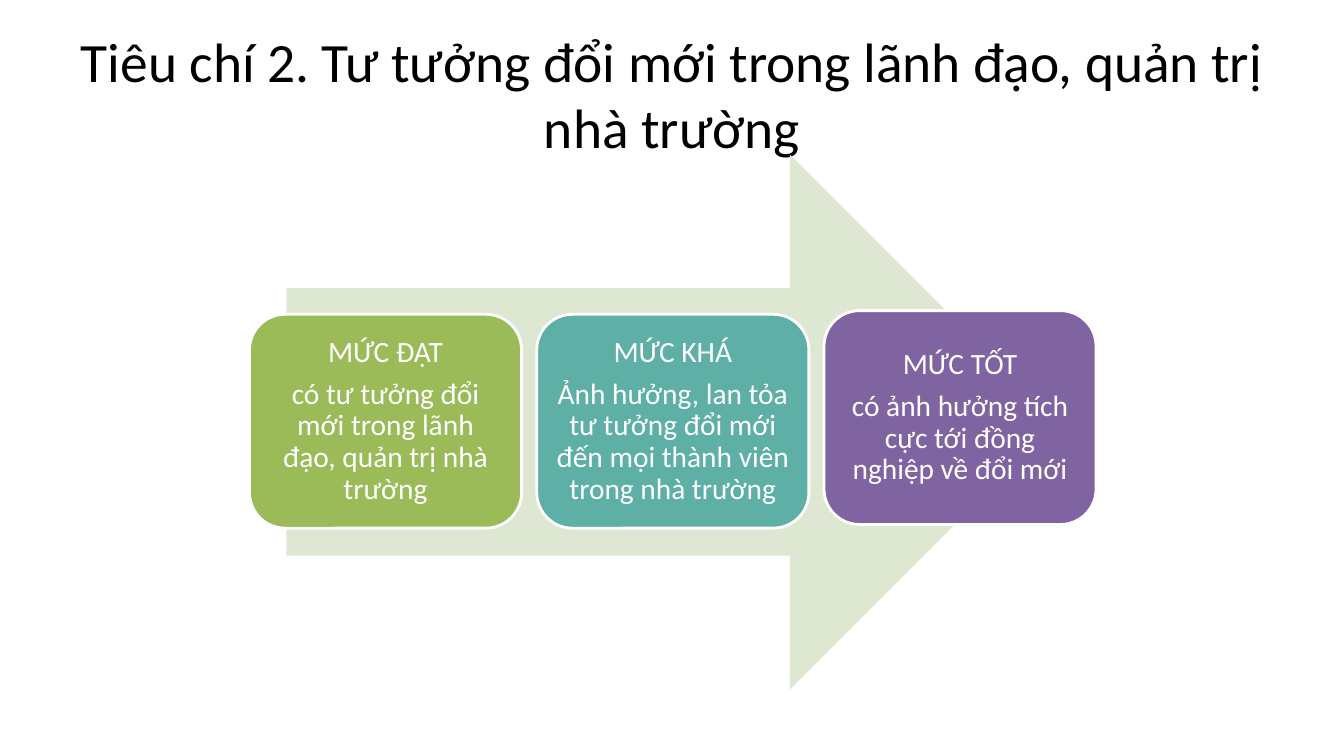
from pptx import Presentation
from pptx.dml.color import RGBColor
from pptx.enum.shapes import MSO_SHAPE
from pptx.enum.text import MSO_ANCHOR, MSO_AUTO_SIZE, PP_ALIGN
from pptx.util import Pt

ARROW, CARD = MSO_SHAPE.RIGHT_ARROW, MSO_SHAPE.ROUNDED_RECTANGLE
MIDDLE, CENTER, NO_FIT = MSO_ANCHOR.MIDDLE, PP_ALIGN.CENTER, MSO_AUTO_SIZE.NONE

TITLE = "Tiêu chí 2. Tư tưởng đổi mới trong lãnh đạo, quản trị nhà trường"
LEVELS = [
    ("MỨC ĐẠT", "có tư tưởng đổi mới trong lãnh đạo, quản trị nhà trường", "9BBB59", 0),
    ("MỨC KHÁ", "Ảnh hưởng, lan tỏa tư tưởng đổi mới đến mọi thành viên trong nhà trường", "5EAFA6", 0),
    ("MỨC TỐT", "có ảnh hưởng tích cực tới đồng nghiệp về đổi mới", "8064A2", -2.6),
]
THEME = {
    "font": "Calibri", "title_size": 39.6, "card_size": 21,
    "title": "000000", "card_text": "FFFFFF", "outline": "FFFFFF", "arrow": "DEE7D1",
}

TITLE_BOX = (48, 21.6, 864, 90)
ARROW_BOX = (204.5, 110.3, 550.8, 382.2)
CARD_LEFT, CARD_TOP, CARD_W, CARD_H = 178.2, 224.5, 194.4, 152.8
CARD_STEP = 205.2
CARD_INSET = 6.5


def rgb(name):
    return RGBColor.from_string(name)


def style(p, size, color):
    p.alignment = CENTER
    p.font.name = THEME["font"]
    p.font.size = Pt(size)
    p.font.color.rgb = rgb(color)


def add_block(slide, kind, box, fill):
    sp = slide.shapes.add_shape(kind, *map(Pt, box))
    sp.shadow.inherit = False
    sp.fill.solid()
    sp.fill.fore_color.rgb = rgb(fill)
    sp.line.fill.background()
    return sp


def add_title(slide):
    sp = slide.shapes.title
    sp.left, sp.top, sp.width, sp.height = map(Pt, TITLE_BOX)
    tf = sp.text_frame
    tf.text = TITLE
    tf.auto_size = NO_FIT
    tf.vertical_anchor = MIDDLE
    style(tf.paragraphs[0], THEME["title_size"], THEME["title"])


def add_card(slide, index, name, detail, fill, shift):
    box = (CARD_LEFT + index * CARD_STEP, CARD_TOP + shift, CARD_W, CARD_H)
    sp = add_block(slide, CARD, box, fill)
    sp.line.color.rgb = rgb(THEME["outline"])
    sp.line.width = Pt(2)
    tf = sp.text_frame
    tf.word_wrap = True
    tf.vertical_anchor = MIDDLE
    tf.margin_left = tf.margin_right = tf.margin_top = tf.margin_bottom = Pt(CARD_INSET)
    tf.text = f"{name}\n{detail}"
    for p in tf.paragraphs:
        style(p, THEME["card_size"], THEME["card_text"])
        p.line_spacing = 0.9
        p.space_after = Pt(7.35)


def main():
    prs = Presentation()
    prs.slide_width, prs.slide_height = Pt(960), Pt(540)
    slide = prs.slides.add_slide(prs.slide_layouts.get_by_name("Title Only"))
    add_title(slide)
    add_block(slide, ARROW, ARROW_BOX, THEME["arrow"])
    for index, level in enumerate(LEVELS):
        add_card(slide, index, *level)
    prs.save("out.pptx")


if __name__ == "__main__":
    main()
